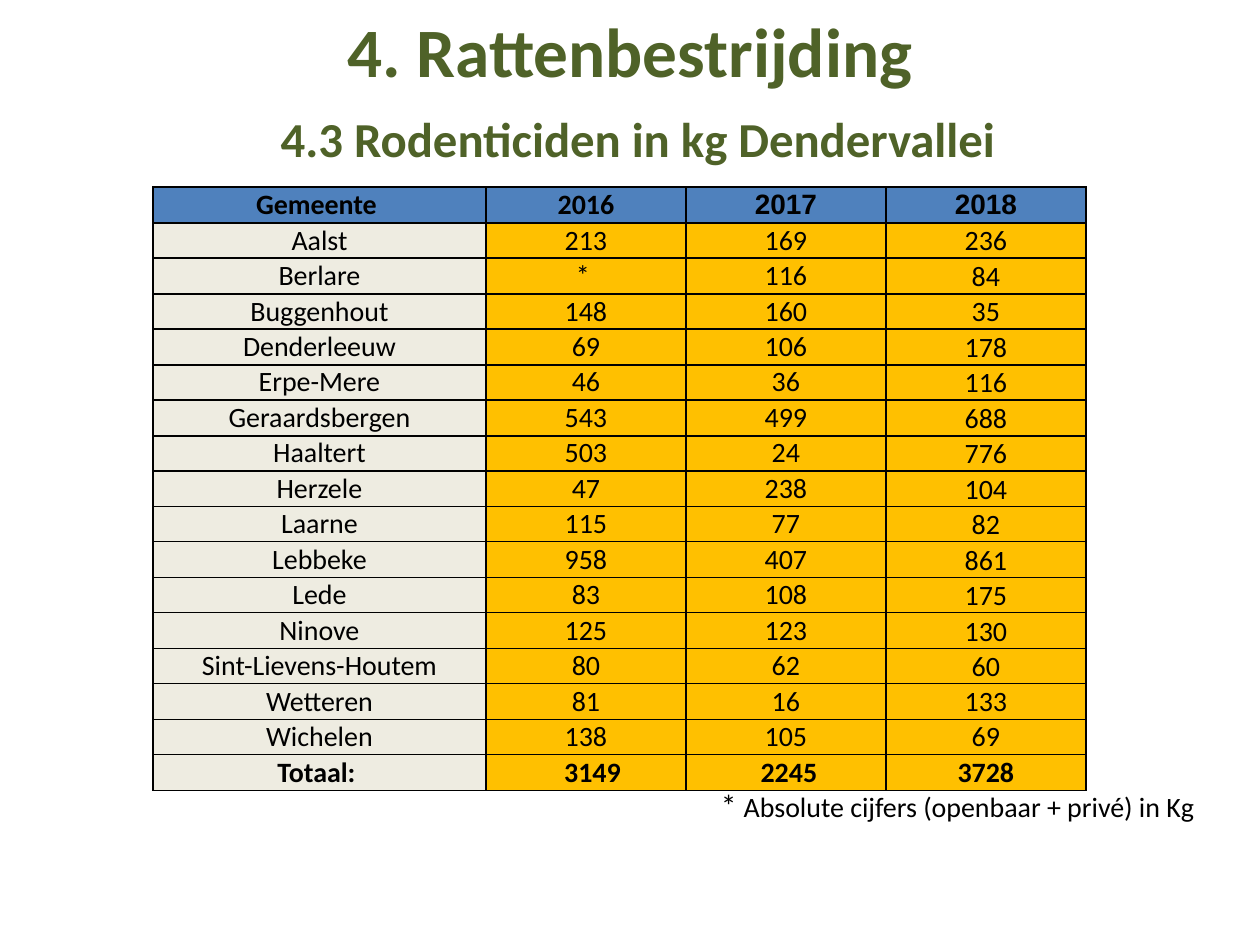
from dataclasses import dataclass

from lxml.etree import SubElement
from pptx import Presentation
from pptx.dml.color import RGBColor
from pptx.enum.text import MSO_ANCHOR as Anchor, PP_ALIGN as Align
from pptx.oxml.ns import qn
from pptx.util import Emu, Pt

PX_PER_INCH = 126
COLORS = {
    "title": "4F6228",
    "text": "000000",
    "border": "000000",
    "header": "4F81BD",
    "town": "EEECE1",
    "amount": "FFC000",
}


@dataclass(frozen=True)
class Box:
    left: int
    top: int
    width: int
    height: int


@dataclass(frozen=True)
class CellStyle:
    fill: str
    bold: bool = False
    font: str = "Calibri"
    anchor: Anchor = Anchor.MIDDLE
    nudge: int = 0  # extra margin: positive on the left, negative on the right


HEADINGS = ("Gemeente", "2016", "2017", "2018")
TOWNS = [
    ("Aalst", "213", "169", "236"),
    ("Berlare", "*", "116", "84"),
    ("Buggenhout", "148", "160", "35"),
    ("Denderleeuw", "69", "106", "178"),
    ("Erpe-Mere", "46", "36", "116"),
    ("Geraardsbergen", "543", "499", "688"),
    ("Haaltert", "503", "24", "776"),
    ("Herzele", "47", "238", "104"),
    ("Laarne", "115", "77", "82"),
    ("Lebbeke", "958", "407", "861"),
    ("Lede", "83", "108", "175"),
    ("Ninove", "125", "123", "130"),
    ("Sint-Lievens-Houtem", "80", "62", "60"),
    ("Wetteren", "81", "16", "133"),
    ("Wichelen", "138", "105", "69"),
]
TOTALS = ("Totaal:", "3149", "2245", "3728")
TOTAL_NUDGES = (-6, 13, 6, 0)

TITLE_BOX = Box(63, 8, 1134, 162)
TABLE_BOX = Box(153, 187, 933, 604)
FOOTNOTE_BOX = Box(721, 780, 530, 50)
COLUMN_WIDTHS = (333, 200, 200, 200)


def px(length: int) -> Emu:
    return Emu(round(length * 914400 / PX_PER_INCH))


def place(box: Box) -> tuple:
    return px(box.left), px(box.top), px(box.width), px(box.height)


def write(paragraph, text: str, *, size: float = 16, bold: bool = False,
          color: str = "text", font: str = "Calibri", align: Align = Align.LEFT) -> None:
    paragraph.alignment = align
    run = paragraph.add_run()
    run.text = text
    run.font.size = Pt(size)
    run.font.bold = bold
    run.font.name = font
    run.font.color.rgb = RGBColor.from_string(COLORS[color])


def add_text_frame(slide, box: Box, inset: int = 0):
    frame = slide.shapes.add_textbox(*place(box)).text_frame
    frame.word_wrap = True
    frame.margin_left = frame.margin_right = 0
    frame.margin_top = frame.margin_bottom = px(inset)
    return frame


def outline(cell) -> None:
    properties = cell._tc.get_or_add_tcPr()
    for side in ("a:lnL", "a:lnR", "a:lnT", "a:lnB"):
        line = SubElement(properties, qn(side), w=str(Pt(1)))
        fill = SubElement(line, qn("a:solidFill"))
        SubElement(fill, qn("a:srgbClr"), val=COLORS["border"])


def fill_cell(cell, text: str, style: CellStyle) -> None:
    outline(cell)  # borders come before the fill in the cell properties
    cell.fill.solid()
    cell.fill.fore_color.rgb = RGBColor.from_string(COLORS[style.fill])
    cell.vertical_anchor = style.anchor
    cell.margin_left = px(1 + max(style.nudge, 0))
    cell.margin_right = px(1 + max(-style.nudge, 0))
    cell.margin_top = cell.margin_bottom = 0
    write(cell.text_frame.paragraphs[0], text, bold=style.bold, font=style.font,
          align=Align.CENTER)


def cell_style(row: int, column: int, text: str) -> CellStyle:
    if row == 0:
        return CellStyle("header", bold=True, font="Arial" if column > 1 else "Calibri",
                         nudge=-6 if column == 0 else 0)
    fill = "town" if column == 0 else "amount"
    if row > len(TOWNS):
        return CellStyle(fill, bold=True, nudge=TOTAL_NUDGES[column])
    return CellStyle(fill, anchor=Anchor.BOTTOM if column == 3 else Anchor.MIDDLE,
                     nudge=-6 if text == "*" else 0)


def add_rodenticide_table(slide, box: Box) -> None:
    rows = [HEADINGS, *TOWNS, TOTALS]
    table = slide.shapes.add_table(len(rows), len(HEADINGS), *place(box)).table
    table.horz_banding = False
    for column, width in zip(table.columns, COLUMN_WIDTHS):
        column.width = px(width)
    # Equal rows that together fill the table height
    edges = [round(box.height * i / len(rows)) for i in range(len(rows) + 1)]
    for r, values in enumerate(rows):
        table.rows[r].height = px(edges[r + 1] - edges[r])
        for c, text in enumerate(values):
            fill_cell(table.cell(r, c), text, cell_style(r, c, text))


def main() -> None:
    presentation = Presentation()
    presentation.slide_width, presentation.slide_height = px(1260), px(945)
    slide = presentation.slides.add_slide(presentation.slide_layouts[6])

    # Title and subtitle
    titles = add_text_frame(slide, TITLE_BOX)
    heading = titles.paragraphs[0]
    write(heading, "4. Rattenbestrijding", size=39.6, bold=True, color="title",
          align=Align.CENTER)
    subheading = titles.add_paragraph()
    subheading.space_before = Pt(10)
    subheading._p.get_or_add_pPr().set("marL", str(px(16)))
    write(subheading, "4.3 Rodenticiden in kg Dendervallei", size=27.9, bold=True,
          color="title", align=Align.CENTER)

    # Amounts per town and year
    add_rodenticide_table(slide, TABLE_BOX)

    # Footnote
    footnote = add_text_frame(slide, FOOTNOTE_BOX, inset=6).paragraphs[0]
    write(footnote, "* ", size=18)
    write(footnote, "Absolute cijfers (openbaar + privé) in Kg")

    presentation.save("out.pptx")


if __name__ == "__main__":
    main()
